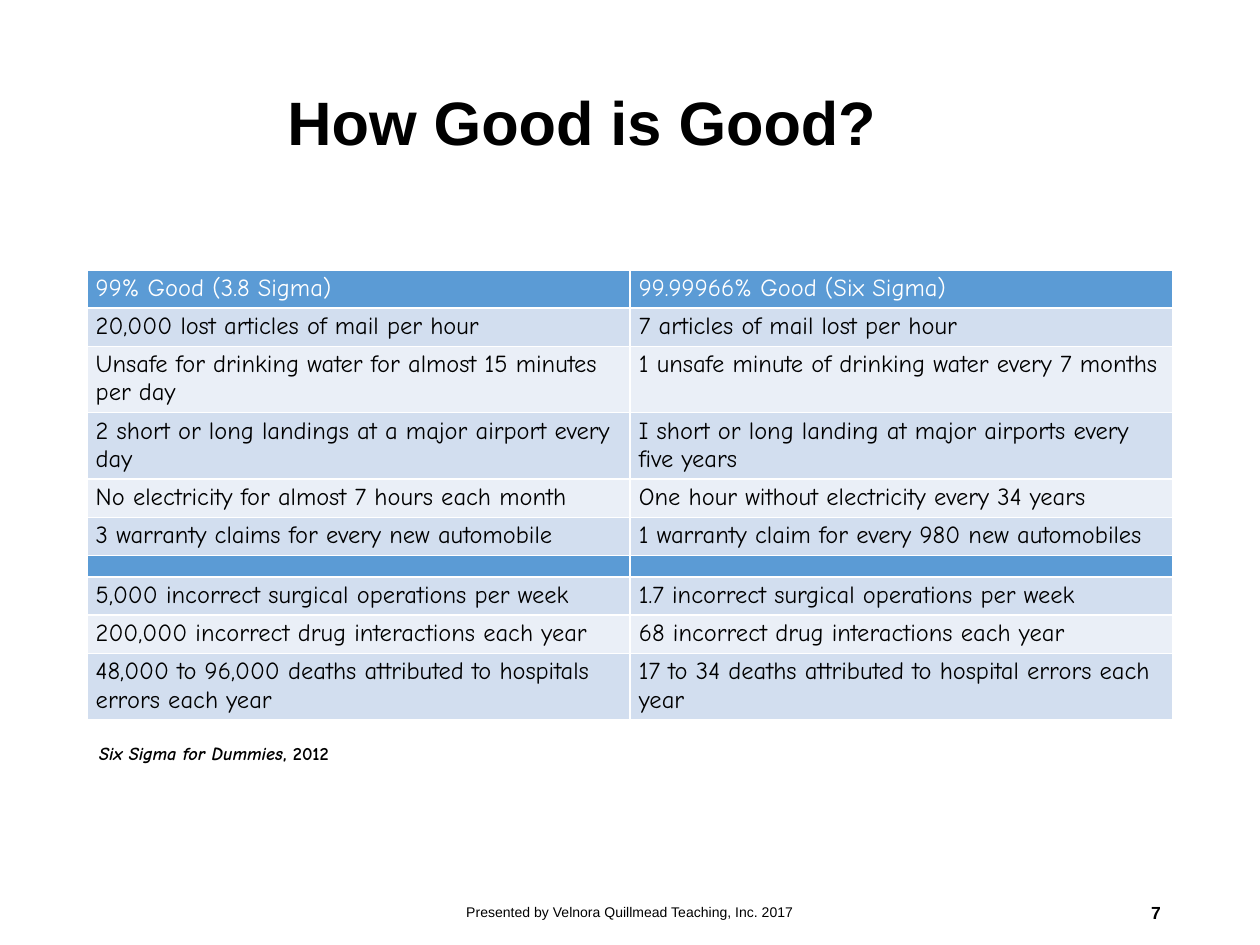
import pptx
import pptx.dml.color
import pptx.enum.text
import pptx.oxml
import pptx.oxml.ns
import pptx.util

Cm = pptx.util.Cm
Pt = pptx.util.Pt
ALIGN = pptx.enum.text.PP_ALIGN
MIDDLE = pptx.enum.text.MSO_ANCHOR.MIDDLE
HUES = {"ink": "000000", "paper": "FFFFFF", "head": "5B9BD5", "odd": "D2DEEF", "even": "EAEFF7"}
ROWS = [
    ("99% Good (3.8 Sigma)", "99.99966% Good (Six Sigma)"),
    ("20,000 lost articles of mail per hour", "7 articles of mail lost per hour"),
    ("Unsafe for drinking water for almost 15 minutes per day",
     "1 unsafe minute of drinking water every 7 months"),
    ("2 short or long landings at a major airport every day",
     "I short or long landing at major airports every five years"),
    ("No electricity for almost 7 hours each month",
     "One hour without electricity every 34 years"),
    ("3 warranty claims for every new automobile",
     "1 warranty claim for every 980 new automobiles"),
    ("", ""),
    ("5,000 incorrect surgical operations per week",
     "1.7 incorrect surgical operations per week"),
    ("200,000 incorrect drug interactions each year",
     "68 incorrect drug interactions each year"),
    ("48,000 to 96,000 deaths attributed to hospitals errors each year",
     "17 to 34 deaths attributed to hospital errors each year"),
]
TALL = {2, 3, 9}
BANDS = {0, 6}


def color(hue):
    """Return the named colour."""
    return pptx.dml.color.RGBColor.from_string(HUES[hue])


def put(thing, **form):
    """Set attributes from format values."""
    for name, value in form.items():
        setattr(thing, name, value)


def write(para, text, hue="ink", **form):
    """Add a formatted run to a paragraph."""
    run = para.add_run()
    run.text = text
    put(run.font, **form)
    run.font.color.rgb = color(hue)


def edge(cell):
    """Draw thin white borders around a cell."""
    space = pptx.oxml.ns.nsdecls("a")
    for side in "LRTB":
        cell._tc.get_or_add_tcPr().append(pptx.oxml.parse_xml(
            f'<a:ln{side} {space} w="12700"><a:solidFill>'
            f'<a:srgbClr val="{HUES["paper"]}"/></a:solidFill></a:ln{side}>'))


def shrink(cell):
    """Keep an empty cell low."""
    put(cell, margin_top=0, margin_bottom=0)
    cell.text_frame.paragraphs[0]._p.append(pptx.oxml.parse_xml(
        f'<a:endParaRPr {pptx.oxml.ns.nsdecls("a")} sz="800"/>'))


def title(slide, left, top, width, height):
    """Place the heading."""
    head = slide.shapes.title
    put(head, left=left, top=top, width=width, height=height)
    put(head.text_frame, vertical_anchor=MIDDLE, word_wrap=True)
    para = head.text_frame.paragraphs[0]
    put(para, alignment=ALIGN.LEFT, line_spacing=0.9)
    write(para, "How Good is Good?", size=Pt(35), name="Arial", bold=True)


def grid(slide, left, top, width):
    """Place the comparison table."""
    table = slide.shapes.add_table(len(ROWS), 2, left, top, width, Cm(9.07)).table
    for col in table.columns:
        col.width = width // 2
    for r, texts in enumerate(ROWS):
        band = r in BANDS
        table.rows[r].height = Cm(1.34 if r in TALL else 0.77 if texts[0] else 0.43)
        hue = "head" if band else "odd" if r % 2 else "even"
        for c, text in enumerate(texts):
            cell = table.cell(r, c)
            put(cell, margin_left=Cm(0.18), margin_right=Cm(0.18),
                margin_top=Cm(0.09), margin_bottom=Cm(0.09))
            edge(cell)
            cell.fill.solid()
            cell.fill.fore_color.rgb = color(hue)
            if text:
                write(cell.text_frame.paragraphs[0], text, "paper" if band else "ink",
                      size=Pt(14), name="Comic Neue", bold=False)
            else:
                shrink(cell)


def label(slide, box, runs, wrap=True, align=ALIGN.LEFT, anchor=MIDDLE, **form):
    """Place a line of text made of runs."""
    frame = slide.shapes.add_textbox(*box).text_frame
    put(frame, word_wrap=wrap, vertical_anchor=anchor)
    para = frame.paragraphs[0]
    para.alignment = align
    for text, slant in runs:
        write(para, text, italic=slant, **form)


def source(slide, left, top):
    """Place the citation under the table."""
    label(slide, (left, top, Cm(6), Cm(0.71)),
          [("Six Sigma for Dummies", True), (", 2012", False)], wrap=False,
          anchor=pptx.enum.text.MSO_ANCHOR.TOP,
          size=Pt(10.5), name="Comic Neue", bold=True)


def footer(slide, left, top, width, height):
    """Place the presenter line and the page number."""
    mid, end = Cm(8.59), Cm(5.72)
    label(slide, (left + (width - mid) // 2, top, mid, height),
          [("Presented by Velnora Quillmead Teaching, Inc. 2017", False)],
          align=ALIGN.CENTER, size=Pt(8), name="Arial")
    label(slide, (left + width - end, top, end, height), [("7", False)],
          align=ALIGN.RIGHT, size=Pt(10), name="Arial", bold=True)


def main():
    """Build and save the slide."""
    deck = pptx.Presentation()
    put(deck, slide_width=Cm(25.4), slide_height=Cm(19.05))
    slide = deck.slides.add_slide(deck.slide_layouts[5])
    left, width = Cm(1.75), Cm(21.9)
    title(slide, Cm(5.54), Cm(0.69), Cm(18.14), Cm(3.68))
    grid(slide, left, Cm(5.44), width)
    source(slide, left, Cm(14.83))
    footer(slide, left, Cm(17.88), width, Cm(1.02))
    deck.save("out.pptx")


if __name__ == "__main__":
    main()
